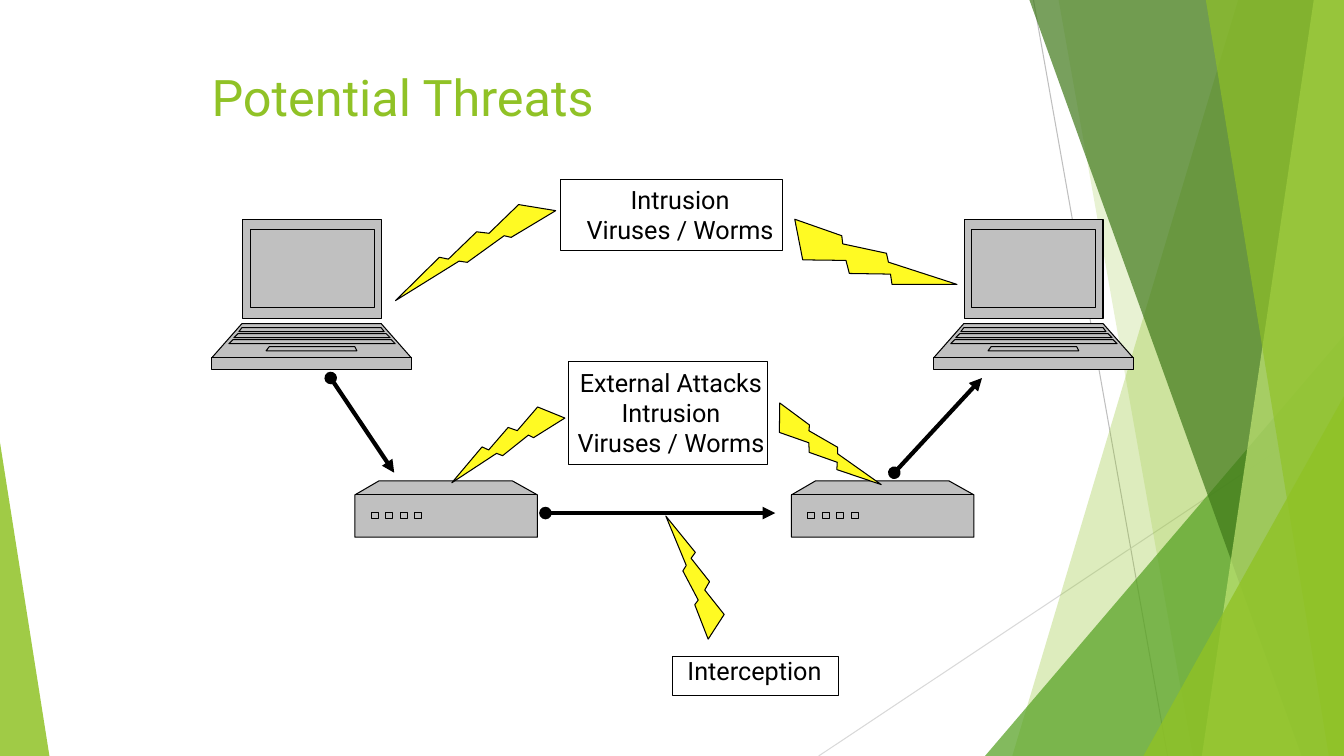
from copy import deepcopy

from lxml import etree
from pptx import Presentation
from pptx.dml.color import RGBColor
from pptx.enum.shapes import MSO_CONNECTOR, MSO_SHAPE
from pptx.enum.text import MSO_ANCHOR, MSO_AUTO_SIZE, PP_ALIGN
from pptx.oxml.ns import qn
from pptx.util import Inches, Pt

WIDE, HIGH = 13.33, 7.5
FONT = "Roboto"
BLACK, LIME, GREEN, GREY, YELLOW = "000000", "90C226", "54A021", "C0C0C0", "FFFA23"
STRAIGHT = MSO_CONNECTOR.STRAIGHT
RECT, PEAK, BOLT = MSO_SHAPE.RECTANGLE, MSO_SHAPE.ISOSCELES_TRIANGLE, MSO_SHAPE.LIGHTNING_BOLT
LEFT, CENTER = PP_ALIGN.LEFT, PP_ALIGN.CENTER
TOP, MIDDLE = MSO_ANCHOR.TOP, MSO_ANCHOR.MIDDLE
FIT, FIXED = MSO_AUTO_SIZE.SHAPE_TO_FIT_TEXT, MSO_AUTO_SIZE.NONE


def color(code):
    return RGBColor.from_string(code)


def quad(top, base):
    """Four corners from two edges, each given as left, right, y."""
    (a, b, y), (c, d, z) = top, base
    return [(a, y), (b, y), (d, z), (c, z)]


def box(x, y, w, h):
    return quad((x, x + w, y), (x, x + w, y + h))


def split(path):
    """Give each contour its own path, so that none cuts a hole in another."""
    parts = []
    for step in list(path):
        if step.tag == qn("a:moveTo"):
            part = deepcopy(path)
            for old in list(part):
                part.remove(old)
            parts.append(part)
        parts[-1].append(step)
    for part in parts:
        path.addprevious(part)
    path.getparent().remove(path)


class Deck:
    def __init__(self):
        self.show = Presentation()
        self.show.slide_width, self.show.slide_height = Inches(WIDE), Inches(HIGH)
        self.shapes = self.show.slides.add_slide(self.show.slide_layouts[6]).shapes

    def paint(self, shape, fill, line, alpha=100):
        shape.shadow.inherit = False
        if fill:
            shape.fill.solid()
            shape.fill.fore_color.rgb = color(fill)
            if alpha < 100:
                tint = shape.fill._xPr.find(".//" + qn("a:srgbClr"))
                etree.SubElement(tint, qn("a:alpha"), val=str(alpha * 1000))
        else:
            shape.fill.background()
        if line:
            shape.line.color.rgb = color(line)
            shape.line.width = Pt(0.75)
        else:
            shape.line.fill.background()

    def shape(self, kind, place, fill=None, line=None, alpha=100, turn=0):
        item = self.shapes.add_shape(kind, *map(Inches, place))
        item.rotation = turn
        self.paint(item, fill, line, alpha)
        return item

    def peak(self, place, apex, fill, alpha):
        self.shape(PEAK, place, fill, alpha=alpha).adjustments[0] = apex

    def outline(self, parts, fill, line=None, alpha=100, at=(0, 0)):
        """One freeform of many contours; a contour of two points stays open."""
        pen = None
        for part in parts:
            spots = [(Inches(x + at[0]), Inches(y + at[1])) for x, y in part]
            if pen is None:
                pen = self.shapes.build_freeform(*spots[0])
            else:
                pen.move_to(*spots[0])
            pen.add_line_segments(spots[1:], close=len(spots) > 2)
        item = pen.convert_to_shape()
        split(item._element.find(".//" + qn("a:path")))
        self.paint(item, fill, line, alpha)

    def band(self, top, base, fill, alpha):
        """A slab from a slanted left edge to the right edge of the slide."""
        self.outline([quad((top, WIDE, 0), (base, WIDE, HIGH))], fill, alpha=alpha)

    def line(self, start, end, tone, width, arrow=False):
        item = self.shapes.add_connector(STRAIGHT, *map(Inches, start + end))
        item.line.color.rgb = color(tone)
        item.line.width = Pt(width)
        if arrow:
            ln = item.line._get_or_add_ln()
            etree.SubElement(ln, qn("a:headEnd"), type="oval")
            etree.SubElement(ln, qn("a:tailEnd"), type="triangle")
        etree.SubElement(item._element.spPr, qn("a:effectLst"))

    def text(self, place, paras, size=18, tone=BLACK, align=CENTER,
             anchor=TOP, wrap=False, fit=FIT):
        """Each paragraph is a list of runs, with a line break between them."""
        frame = self.shapes.add_textbox(*map(Inches, place)).text_frame
        frame.word_wrap, frame.auto_size, frame.vertical_anchor = wrap, fit, anchor
        for i, runs in enumerate(paras):
            para = frame.add_paragraph() if i else frame.paragraphs[0]
            para.alignment = align
            for j, words in enumerate(runs):
                if j:
                    para.add_line_break()
                run = para.add_run()
                run.text = words
                run.font.name, run.font.size = FONT, Pt(size)
                run.font.color.rgb = color(tone)


LAPTOP = [
    box(0.31, 0, 1.37, 0.98),
    quad((0.3, 1.68, 1.03), (0, 1.98, 1.37)),
    box(0, 1.37, 1.98, 0.12),
    box(0.38, 0.1, 1.23, 0.77),
    quad((0.3, 1.68, 1.07), (0.27, 1.71, 1.11)),
    quad((0.57, 1.42, 1.26), (0.54, 1.44, 1.3)),
    quad((0.26, 1.73, 1.13), (0.22, 1.77, 1.17)),
    quad((0.21, 1.78, 1.19), (0.17, 1.82, 1.23)),
]
ROUTER = [
    [(0, 0.14), (0.24, 0), (1.56, 0), (1.81, 0.14), (1.81, 0.56), (0, 0.56)],
    [(0, 0.14), (1.81, 0.14)],
] + [box(0.16 + 0.145 * i, 0.31, 0.07, 0.06) for i in range(4)]
ARROWS = [((3.28, 3.75), (3.91, 4.69)), ((5.41, 5.09), (7.69, 5.09)),
          ((8.87, 4.69), (9.74, 3.75))]
BOLTS = [
    ((4.45, 1.55, 0.47, 1.8), 69.7),
    ((4.78, 3.75, 0.47, 1.26), 73),
    ((7.93, 3.83, 0.47, 1.26), 321.6),
    ((6.67, 5.09, 0.47, 1.26), 173.8),
    ((8.25, 1.77, 0.71, 1.68), 306.3),
]
# Frame, text place, paragraphs, alignment
THREATS = [
    ((5.56, 1.78, 2.2, 0.71), (5.7, 1.78, 2.09, 0.71),
     [["Intrusion"], ["Viruses / Worms"]], CENTER),
    ((5.64, 3.59, 1.97, 1.02), (5.58, 3.59, 2.15, 1.01),
     [["External Attacks"], ["Intrusion", "Viruses / Worms"]], CENTER),
    ((6.67, 6.51, 1.65, 0.39), (6.72, 6.45, 1.7, 0.4), [["Interception"]], LEFT),
]


def main():
    deck = Deck()
    deck.line((10.25, 0), (11.58, HIGH), "BFBFBF", 0.75)
    deck.line((WIDE, 4.03), (8.12, HIGH), "D9D9D9", 0.75)
    deck.band(12.28, 10.04, LIME, 30)
    deck.band(10.5, 11.83, LIME, 20)
    deck.peak((9.77, 3.33, 3.56, 4.17), 1, GREEN, 72)
    deck.band(10.21, 12.91, "3F7819", 70)
    deck.band(13.03, 11.92, "C0E474", 70)
    deck.band(11.96, 13.18, LIME, 65)
    deck.peak((11.34, 3.93, 1.99, 3.57), 1, LIME, 80)
    deck.peak((0, 4.39, 0.49, 3.11), 0, LIME, 85)

    deck.text((2, 0.5, 9.5, 0.92), [["Potential Threats"]], 36, LIME, LEFT,
              MIDDLE, True, FIXED)
    for x in (2.1, 9.26):
        deck.outline(LAPTOP, GREY, BLACK, at=(x, 2.18))
    for x in (3.52, 7.85):
        deck.outline(ROUTER, GREY, BLACK, at=(x, 4.77))
    for start, end in ARROWS:
        deck.line(start, end, BLACK, 3, arrow=True)
    for place, turn in BOLTS:
        deck.shape(BOLT, place, YELLOW, BLACK, turn=turn)
    for frame, place, paras, align in THREATS:
        deck.shape(RECT, frame, line=BLACK)
        deck.text(place, paras, align=align)
    deck.show.save("out.pptx")


if __name__ == "__main__":
    main()
